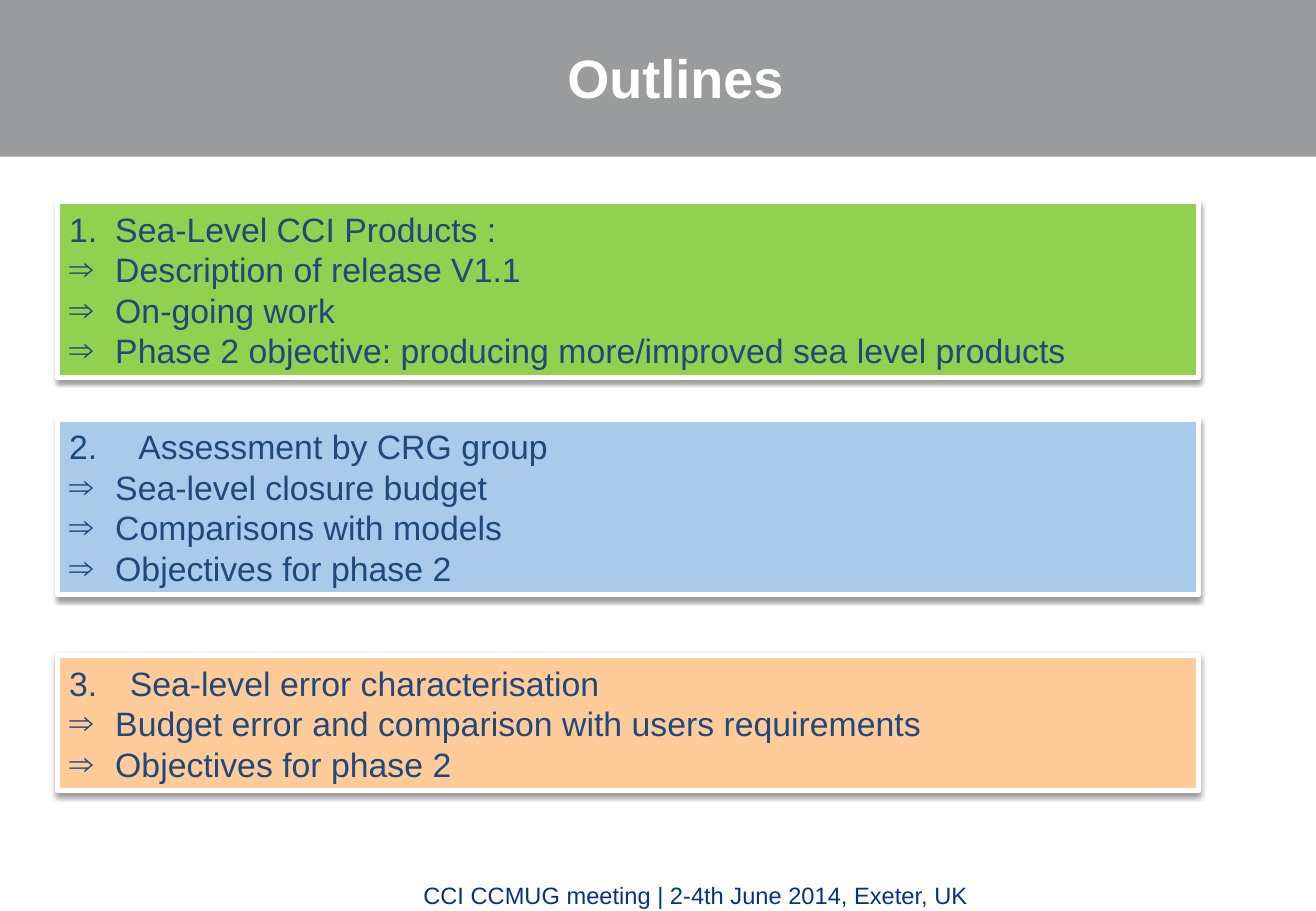
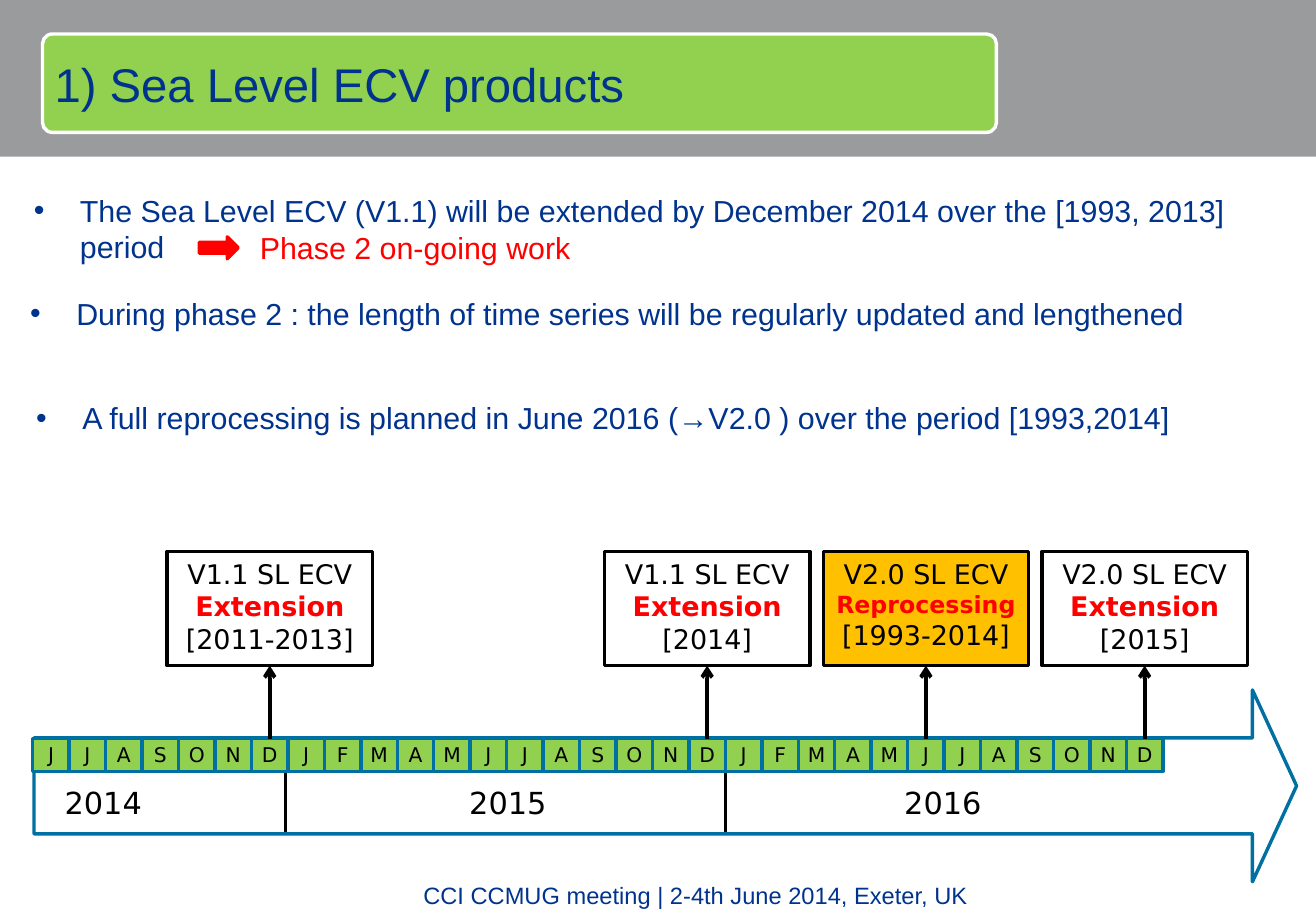
from dataclasses import dataclass
from typing import Optional

from lxml.etree import SubElement
from pptx import Presentation
from pptx.dml.color import RGBColor
from pptx.enum.shapes import MSO_CONNECTOR, MSO_SHAPE
from pptx.enum.text import MSO_ANCHOR, MSO_AUTO_SIZE, PP_ALIGN
from pptx.oxml.ns import qn
from pptx.util import Emu, Inches, Pt

# Grid: cells of a tenth of an inch
CELL = Inches(0.1)
COLS, ROWS = 108.3, 75
MONTH = 3  # columns per month
AXIS = 2.7  # first month's column
CAL = 60.8  # row of the months

HUES = {
    "band": "9A9B9C", "white": "FFFFFF", "black": "000000",
    "navy": "00338D", "slate": "1F497D", "green": "92D050",
    "sky": "AACAEA", "peach": "FFCC99", "gold": "FFC000",
    "red": "FF0000", "teal": "0070A2",
}
SANS, DEJA = "Arial", "DejaVu Sans"


@dataclass
class Area:
    x: float
    y: float
    w: float
    h: float

    def emu(self) -> list[Emu]:
        return [grid(v) for v in (self.x, self.y, self.w, self.h)]


@dataclass
class Line:
    text: str
    size: float
    hue: str
    face: str = SANS
    bold: bool = False
    align: PP_ALIGN = PP_ALIGN.LEFT
    hang: float = 0
    mark: str = ""
    start: int = 0


@dataclass
class Part:
    y: float
    hue: str
    hang: float
    head: str
    items: list[str]


@dataclass
class Event:
    month: int
    name: str
    kind: str
    span: str
    hue: str = "white"
    size: float = 16


@dataclass
class Year:
    name: str
    mid: float
    end: Optional[float] = None


def grid(n: float) -> Emu:
    return Emu(round(n * CELL))


def tint(hue: str) -> RGBColor:
    return RGBColor.from_string(HUES[hue])


def write(shape, lines: list[Line], anchor=MSO_ANCHOR.TOP, pad: float = 0,
          wrap: bool = True, grow: bool = True) -> None:
    frame = shape.text_frame
    frame.word_wrap = wrap
    frame.auto_size = MSO_AUTO_SIZE.SHAPE_TO_FIT_TEXT if grow else MSO_AUTO_SIZE.NONE
    frame.vertical_anchor = anchor
    if pad:
        frame.margin_left = frame.margin_right = grid(pad)
        frame.margin_top = frame.margin_bottom = grid(pad)
    for i, line in enumerate(lines):
        para = frame.add_paragraph() if i else frame.paragraphs[0]
        para.alignment = line.align
        if line.hang:
            bullet(para, line)
        run = para.add_run()
        run.text = line.text
        font = run.font
        font.name, font.size, font.bold = line.face, Pt(line.size), line.bold
        font.color.rgb = tint(line.hue)


def bullet(para, line: Line) -> None:
    props = para._p.get_or_add_pPr()
    props.set("marL", str(grid(line.hang)))
    props.set("indent", str(-grid(line.hang)))
    SubElement(props, qn("a:buFont"), typeface=SANS)
    if line.start:
        SubElement(props, qn("a:buAutoNum"), type="arabicPeriod", startAt=str(line.start))
    else:
        SubElement(props, qn("a:buChar"), char=line.mark)


def draw(slide, kind: MSO_SHAPE, area: Area, fill: str = "", edge: str = "",
         width: float = 2):
    shape = slide.shapes.add_shape(kind, *area.emu())
    shape.shadow.inherit = False
    if fill:
        shape.fill.solid()
        shape.fill.fore_color.rgb = tint(fill)
    else:
        shape.fill.background()
    if edge:
        shape.line.color.rgb = tint(edge)
        shape.line.width = Pt(width)
    else:
        shape.line.fill.background()
    return shape


def label(slide, area: Area, line: Line, wrap: bool = True) -> None:
    write(slide.shapes.add_textbox(*area.emu()), [line], wrap=wrap)


def rule(slide, x: float, top: float, low: float):
    line = slide.shapes.add_connector(
        MSO_CONNECTOR.STRAIGHT, grid(x), grid(low), grid(x), grid(top))
    line.line.color.rgb = tint("black")
    line.line.width = Pt(2.25)
    SubElement(line.element.spPr, qn("a:effectLst"))
    return line


def shade(shape) -> None:
    fx = shape.element.spPr.find(qn("a:effectLst"))
    cast = SubElement(fx, qn("a:outerShdw"), blurRad=str(Pt(3.1)), dist=str(Pt(1.6)),
                      dir="5400000", rotWithShape="0")
    hue = SubElement(cast, qn("a:srgbClr"), val=HUES["black"])
    SubElement(hue, qn("a:alpha"), val="38000")


def head(slide, area: Area, line: Line, pad: float = 0) -> None:
    title = slide.shapes.title
    title.left, title.top, title.width, title.height = area.emu()
    write(title, [line], MSO_ANCHOR.MIDDLE, pad, grow=False)
    slide.shapes.element.append(title.element)  # bring to front


def dress(slide) -> None:
    """Put the band and the footer on the layout that the slides share."""
    layout = slide.slide_layout
    for holder in list(layout.placeholders)[1:]:
        holder.element.getparent().remove(holder.element)
    band = draw(slide, MSO_SHAPE.RECTANGLE, Area(0, 0, COLS, 12.9), "band")
    foot = slide.shapes.add_textbox(*Area(20.7, 72, 73.1, 3).emu())
    write(foot, [Line("CCI CCMUG meeting | 2-4th June 2014, Exeter, UK", 14, "navy",
                      align=PP_ALIGN.CENTER)], grow=False)
    for shape in (band, foot):
        layout.shapes.element.append(shape.element)


PARTS = [
    Part(16.6, "green", 3.8, "Sea-Level CCI Products :", [
        "Description of release V1.1", "On-going work",
        "Phase 2 objective: producing more/improved sea level products"]),
    Part(34.5, "sky", 5.7, "Assessment by CRG group", [
        "Sea-level closure budget", "Comparisons with models",
        "Objectives for phase 2"]),
    Part(54, "peach", 5, "Sea-level error characterisation", [
        "Budget error and comparison with users requirements",
        "Objectives for phase 2"]),
]


def outline(slide) -> None:
    head(slide, Area(11.1, 1.6, 89, 9.4),
         Line("Outlines", 32, "white", bold=True, align=PP_ALIGN.CENTER))
    for num, part in enumerate(PARTS, 1):
        lines = [Line(part.head, 20, "slate", hang=part.hang, start=num)]
        lines += [Line(t, 20, "slate", hang=3.8, mark="⇒") for t in part.items]
        area = Area(4.7, part.y, 93.9, 1 + 3.37 * len(lines))
        box = draw(slide, MSO_SHAPE.RECTANGLE, area, part.hue, "white", 3)
        shade(box)
        write(box, lines, MSO_ANCHOR.MIDDLE)


POINTS = [
    (Area(1.8, 15.3, 103.7, 7.1), "The Sea Level ECV (V1.1) will be extended by "
     "December 2014 over the [1993, 2013] period"),
    (Area(1.5, 23.8, 103.7, 4), "During phase 2 : the length of time series will be "
     "regularly updated and lengthened"),
    (Area(2, 32.4, 103.7, 4), "A full reprocessing is planned in June 2016 "
     "(→V2.0 ) over the period [1993,2014]"),
]
YEARS = [Year("2014", 8.5, 23.5), Year("2015", 41.8, 59.7), Year("2016", 77.6)]
MONTHS = "JJASOND" + "JFMAMJJASOND" * 2
EVENTS = [
    Event(6, "V1.1 SL ECV", "Extension", "[2011-2013]"),
    Event(18, "V1.1 SL ECV", "Extension", "[2014]"),
    Event(24, "V2.0 SL ECV", "Reprocessing", "[1993-2014]", "gold", 14),
    Event(30, "V2.0 SL ECV", "Extension", "[2015]"),
]


def plan(slide) -> None:
    # Title on its plate
    plate = draw(slide, MSO_SHAPE.ROUNDED_RECTANGLE, Area(3.5, 2.8, 78.5, 8.1),
                 "green", "white")
    plate.adjustments[0] = 0.1
    head(slide, Area(3.8, 3.1, 78.4, 7.6),
         Line("1) Sea Level ECV products", 28, "navy"), 0.7)

    # Points and the red remark
    for area, text in POINTS:
        label(slide, area, Line(text, 18, "navy", hang=3.8, mark="•"))
    draw(slide, MSO_SHAPE.RIGHT_ARROW, Area(16.4, 19.5, 3.2, 1.8), "red", "red")
    label(slide, Area(20.4, 18.4, 28.5, 4), Line("Phase 2 on-going work", 18, "red"), False)

    # Time arrow with years
    arrow = draw(slide, MSO_SHAPE.RIGHT_ARROW, Area(2.8, 56.8, 103.9, 15.8), edge="teal")
    arrow.adjustments[0], arrow.adjustments[1] = 0.5, 0.23
    for year in YEARS:
        label(slide, Area(year.mid - 8, 64.1, 16, 4),
              Line(year.name, 18, "black", DEJA, align=PP_ALIGN.CENTER))
        if year.end:
            rule(slide, year.end, 60.7, 68.5)

    # Months
    cells = []
    for i, name in enumerate(MONTHS):
        cell = draw(slide, MSO_SHAPE.RECTANGLE, Area(AXIS + i * MONTH, CAL, MONTH, 2.7),
                    "green", "teal")
        write(cell, [Line(name, 12, "black", DEJA, align=PP_ALIGN.CENTER)],
              MSO_ANCHOR.MIDDLE, 0.4, grow=False)
        cells.append(cell)

    # Events, each joined to its month
    for event in EVENTS:
        mid = AXIS + (event.month + 0.5) * MONTH
        box = draw(slide, MSO_SHAPE.RECTANGLE, Area(mid - 8.45, 45.4, 16.9, 9.4),
                   event.hue, "black")
        rows = [(event.name, 16, "black", False), (event.kind, event.size, "red", True),
                (event.span, 16, "black", False)]
        write(box, [Line(text, size, hue, DEJA, bold, PP_ALIGN.CENTER)
                    for text, size, hue, bold in rows])
        link = rule(slide, mid, 54.8, CAL)
        link.begin_connect(cells[event.month], 0)
        link.end_connect(box, 2)
        SubElement(link.line._get_or_add_ln(), qn("a:tailEnd"), type="arrow")


def main() -> None:
    deck = Presentation()
    deck.slide_width, deck.slide_height = grid(COLS), grid(ROWS)
    layout = deck.slide_layouts[5]
    first = deck.slides.add_slide(layout)
    dress(first)
    outline(first)
    plan(deck.slides.add_slide(layout))
    deck.save("out.pptx")


if __name__ == "__main__":
    main()
